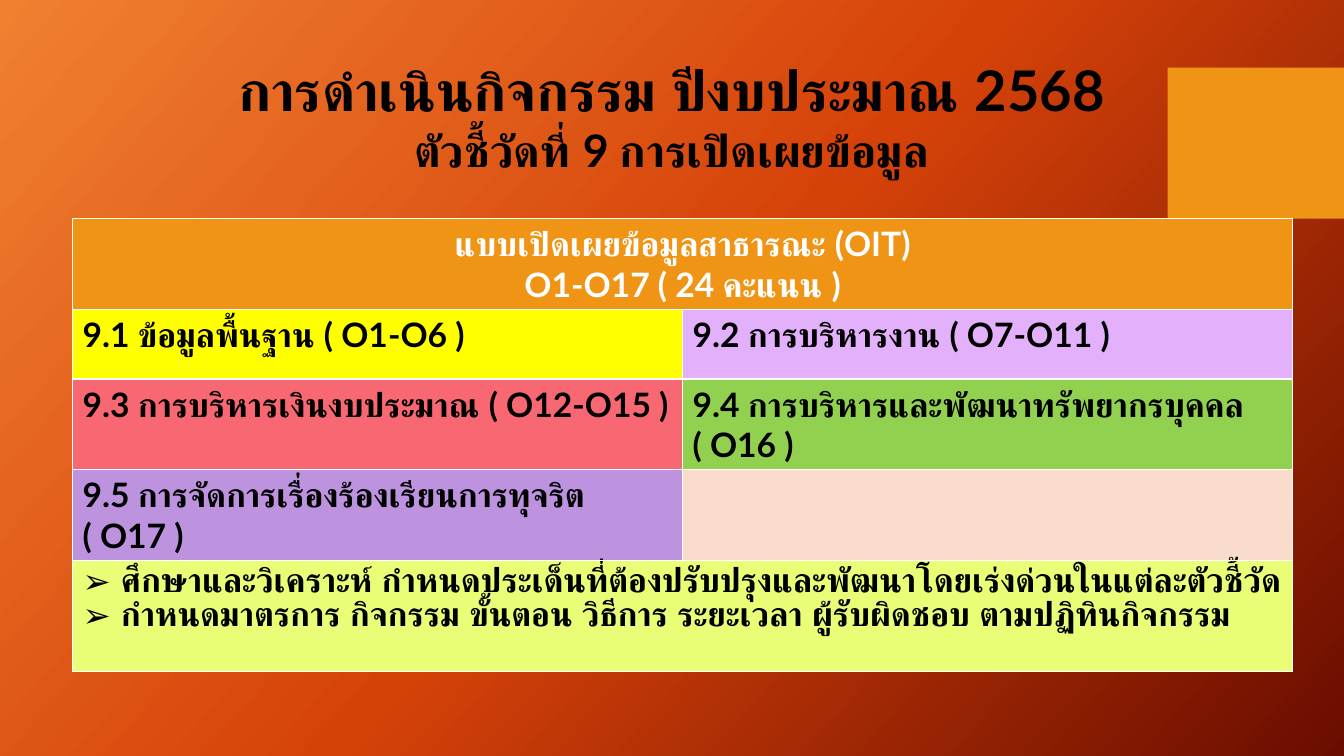
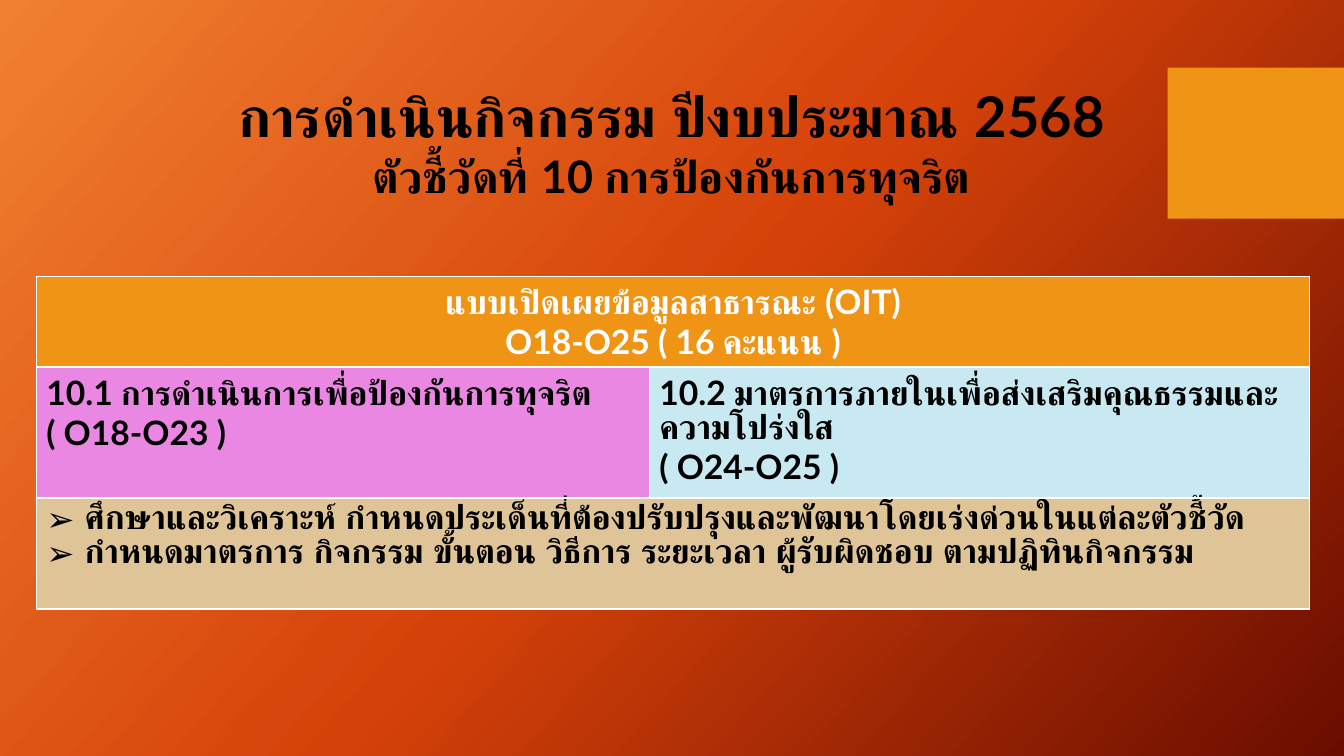
from copy import deepcopy
from pptx import Presentation
from pptx.dml.color import RGBColor
from pptx.enum.shapes import MSO_SHAPE
from pptx.enum.text import MSO_ANCHOR, MSO_AUTO_SIZE, PP_ALIGN
from pptx.oxml.ns import qn
from pptx.util import Inches, Pt

THEME = {
    "font": "Lato", "ink": "000000", "light": "FFFFFF", "accent": "F09415",
    "back": [(0, "F18031"), (0.5, "D54209"), (1, "6A0D00")], "angle": 42,
    "head": 40, "sub": 32, "body": 24,
}
WIDE, HIGH = 13.33, 7.5
ROW, LAST = 0.69, 1.1
HANG = 0.38

HEAD = "การดำเนินกิจกรรม ปีงบประมาณ 2568"
FORM = "แบบเปิดเผยข้อมูลสาธารณะ (OIT)"
STEPS = [
    "ศึกษาและวิเคราะห์ กำหนดประเด็นที่ต้องปรับปรุงและพัฒนาโดยเร่งด่วนในแต่ละตัวชี้วัด",
    "กำหนดมาตรการ กิจกรรม ขั้นตอน วิธีการ ระยะเวลา ผู้รับผิดชอบ ตามปฏิทินกิจกรรม",
]
PAGES = [
    {
        "sub": "ตัวชี้วัดที่ 9 การเปิดเผยข้อมูล", "top": 0.5,
        "score": "O1-O17 ( 24 คะแนน )",
        "at": (0.72, 2.17), "cols": (6.05, 6.05), "steps": "EAFD77",
        "topics": [
            [(["9.1 ข้อมูลพื้นฐาน ( O1-O6 )"], "FFFF00"),
             (["9.2 การบริหารงาน ( O7-O11 )"], "E3B1FB")],
            [(["9.3 การบริหารเงินงบประมาณ ( O12-O15 )"], "F86872"),
             (["9.4 การบริหารและพัฒนาทรัพยากรบุคคล ( O16 )"], "92D050")],
            [(["9.5 การจัดการเรื่องร้องเรียนการทุจริต ( O17 )"], "BD92DE"),
             ([], "F9DCCC")],
        ],
    },
    {
        "sub": "ตัวชี้วัดที่ 10 การป้องกันการทุจริต", "top": 0.75,
        "score": "O18-O25 ( 16 คะแนน )",
        "at": (0.36, 2.74), "cols": (6.08, 6.55), "steps": "DEC496",
        "topics": [
            [(["10.1 การดำเนินการเพื่อป้องกันการทุจริต ( O18-O23 )"], "E987E2"),
             (["10.2 มาตรการภายในเพื่อส่งเสริมคุณธรรมและความโปร่งใส",
               "( O24-O25 )"], "C8E8F2")],
        ],
    },
]


def color(name):
    return RGBColor.from_string(THEME.get(name, name))


def paint(fill, name):
    fill.solid()
    fill.fore_color.rgb = color(name)


def bullet(para):
    props = para._p.get_or_add_pPr()
    props.set("marL", str(Inches(HANG)))
    props.set("indent", str(-Inches(HANG)))
    props.append(props.makeelement(qn("a:buFont"), {"typeface": "Arial"}))
    props.append(props.makeelement(qn("a:buChar"), {"char": "➢"}))


def write(frame, lines, sizes, ink="ink", align=PP_ALIGN.LEFT, marks=False):
    for num, (line, size) in enumerate(zip(lines, sizes)):
        para = frame.add_paragraph() if num else frame.paragraphs[0]
        para.alignment = align
        if marks:
            bullet(para)
        run = para.add_run()
        run.text = line
        style = {"name": THEME["font"], "size": Pt(THEME[size]), "bold": True}
        for key, value in style.items():
            setattr(run.font, key, value)
        run.font.color.rgb = color(ink)


def backdrop(master):
    fill = master.background.fill
    fill.gradient()
    fill.gradient_angle = 360 - THEME["angle"]
    stops = master.element.find(".//" + qn("a:gsLst"))
    stops.append(deepcopy(stops[-1]))
    for stop, (place, tone) in zip(fill.gradient_stops, THEME["back"]):
        stop.position = place
        stop.color.rgb = color(tone)


def block(slide, layout):
    box = slide.shapes.add_shape(
        MSO_SHAPE.RECTANGLE, Inches(11.58), Inches(0.67), Inches(1.75), Inches(1.5))
    box.shadow.inherit = False
    paint(box.fill, "accent")
    box.line.fill.background()
    layout.shapes.element.append(box.element)


def title(slide, page):
    box = slide.shapes.title
    place = {"left": 0.07, "top": page["top"], "width": 13.18, "height": 1.31}
    for key, value in place.items():
        setattr(box, key, Inches(value))
    frame = box.text_frame
    look = {"word_wrap": True, "auto_size": MSO_AUTO_SIZE.SHAPE_TO_FIT_TEXT,
            "vertical_anchor": MSO_ANCHOR.MIDDLE}
    for key, value in look.items():
        setattr(frame, key, value)
    write(frame, [HEAD, page["sub"]], ["head", "sub"], align=PP_ALIGN.CENTER)


def grid(slide, page):
    topics, cols = page["topics"], page["cols"]
    rows = [ROW] * (len(topics) + 1) + [LAST]
    left, top = page["at"]
    table = slide.shapes.add_table(
        len(rows), len(cols), Inches(left), Inches(top),
        Inches(sum(cols)), Inches(sum(rows))).table
    table.horz_banding = False
    for row, size in zip(table.rows, rows):
        row.height = Inches(size)
    for col, size in zip(table.columns, cols):
        col.width = Inches(size)

    def fill(row, col, lines, tone, **style):
        cell = table.cell(row, col)
        paint(cell.fill, tone)
        write(cell.text_frame, lines, ["body"] * len(lines), **style)

    end = len(rows) - 1
    for row in (0, end):
        table.cell(row, 0).merge(table.cell(row, len(cols) - 1))
    fill(0, 0, [FORM, page["score"]], "accent", ink="light", align=PP_ALIGN.CENTER)
    for row, pair in enumerate(topics, 1):
        for col, (lines, tone) in enumerate(pair):
            fill(row, col, lines, tone)
    fill(end, 0, STEPS, page["steps"], marks=True)


def main():
    deck = Presentation()
    deck.slide_width, deck.slide_height = Inches(WIDE), Inches(HIGH)
    layout = deck.slide_layouts.get_by_name("Title Only")
    backdrop(deck.slide_master)
    for num, page in enumerate(PAGES):
        slide = deck.slides.add_slide(layout)
        if num == 0:
            block(slide, layout)
        title(slide, page)
        grid(slide, page)
    deck.save("out.pptx")


if __name__ == "__main__":
    main()
